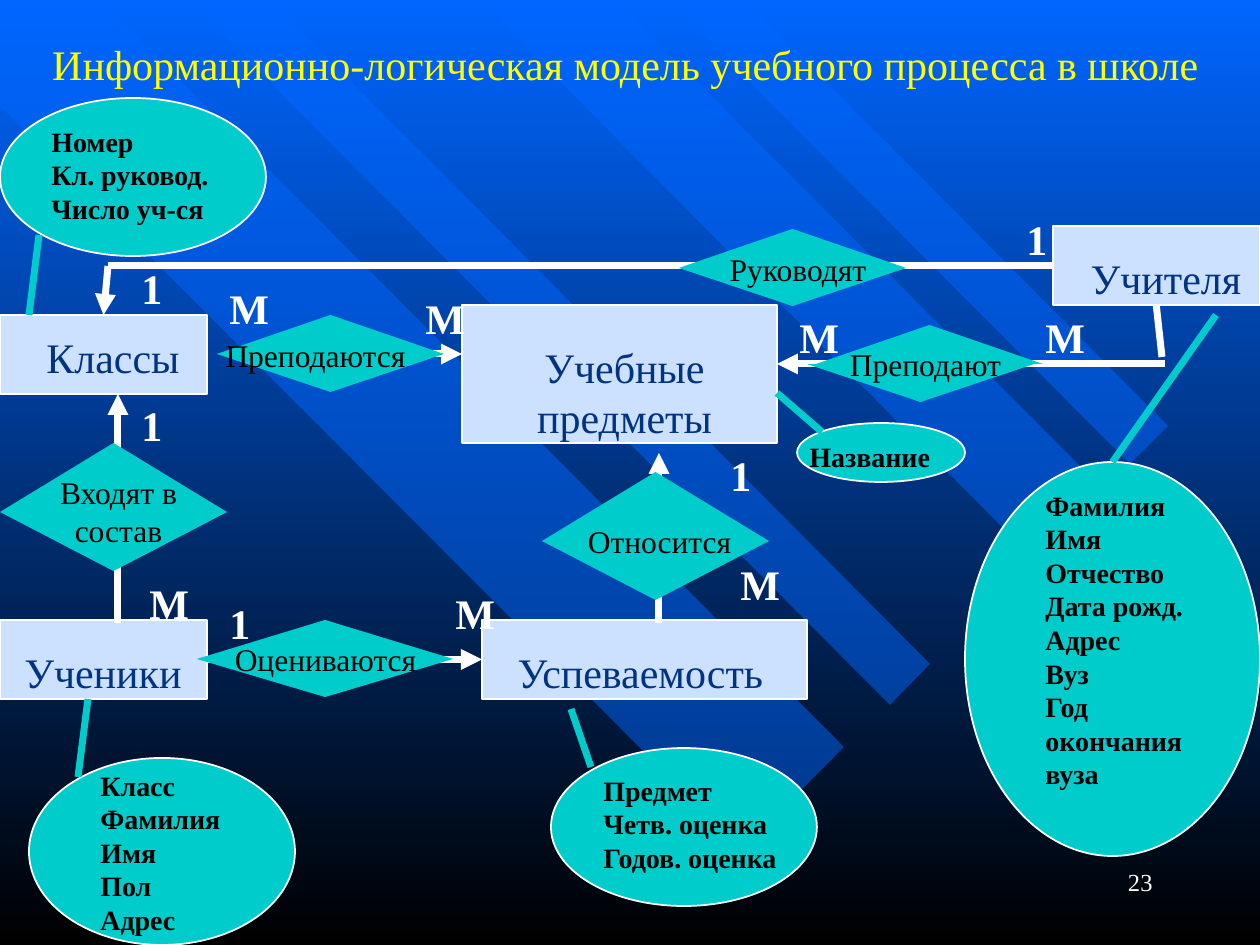
from lxml.etree import SubElement
from pptx import Presentation
from pptx.dml.color import RGBColor
from pptx.enum.shapes import MSO_CONNECTOR as Connector, MSO_SHAPE as Shape
from pptx.enum.text import MSO_ANCHOR as Anchor, MSO_AUTO_SIZE as AutoSize, PP_ALIGN as Align
from pptx.oxml.ns import qn
from pptx.util import Emu, Pt

SCALE = 914400 / 126
TOP, LEFT, RIGHT = 0, 1, 3


def px(length):
    return Emu(round(length * SCALE))


def rgb(value):
    return RGBColor.from_string(value)


def write_text(frame, text, *, size, color, font, bold=False, align=Align.CENTER,
               anchor=Anchor.TOP, padded=True, grow=True):
    frame.word_wrap = True
    frame.auto_size = AutoSize.SHAPE_TO_FIT_TEXT if grow else AutoSize.NONE
    frame.vertical_anchor = anchor
    if not padded:
        frame.margin_left = frame.margin_right = frame.margin_top = frame.margin_bottom = 0
    for index, line in enumerate(text.split("\n")):
        paragraph = frame.paragraphs[0] if index == 0 else frame.add_paragraph()
        paragraph.alignment = align
        paragraph.line_spacing = Pt(size * 1.2)
        run = paragraph.add_run()
        run.text = line
        run.font.name = font
        run.font.size = Pt(size)
        run.font.bold = bold
        run.font.color.rgb = rgb(color)


class ModelSlide:
    font = "Times New Roman"
    white, black, yellow = "FFFFFF", "000000", "FFFF00"
    blue, navy, pale, teal = "0066FF", "003380", "CCE0FF", "00CCCC"

    def __init__(self, presentation):
        self.slide = presentation.slides.add_slide(presentation.slide_layouts[6])
        self.shapes = self.slide.shapes

    def background(self):
        fill = self.slide.background.fill
        fill.gradient()
        fill.gradient_angle = 270
        for stop, position, color in zip(fill.gradient_stops, (0, 1), (self.blue, self.black)):
            stop.position = position
            stop.color.rgb = rgb(color)

    def ribbon(self, points):
        builder = self.shapes.build_freeform(*points[0], scale=SCALE)
        builder.add_line_segments(points[1:], close=True)
        shape = builder.convert_to_shape()
        self.paint(shape, self.blue)
        color = shape._element.spPr.find(qn("a:solidFill")).find(qn("a:srgbClr"))
        SubElement(color, qn("a:alpha"), val="50000")

    def paint(self, shape, fill, outlined=False):
        shape.shadow.inherit = False
        shape.fill.solid()
        shape.fill.fore_color.rgb = rgb(fill)
        if outlined:
            shape.line.color.rgb = rgb(self.white)
            shape.line.width = Pt(1)
        else:
            shape.line.fill.background()

    def preset(self, kind, box, fill, outlined=False):
        shape = self.shapes.add_shape(kind, *map(px, box))
        self.paint(shape, fill, outlined)
        return shape

    def text(self, text, box, **style):
        frame = self.shapes.add_textbox(*map(px, box)).text_frame
        write_text(frame, text, font=self.font, **style)

    def entity(self, name, box, text_box):
        shape = self.preset(Shape.RECTANGLE, box, self.pale, True)
        self.text(name, text_box, size=24, color=self.navy)
        return shape

    def attributes(self, names, box, text_box):
        shape = self.preset(Shape.OVAL, box, self.teal, True)
        self.text(names, text_box, size=16, color=self.black, bold=True, align=Align.LEFT)
        return shape

    def relation(self, name, left, top, width, upper, lower, text_box, shift=0):
        self.preset(Shape.ISOSCELES_TRIANGLE, (left, top, width, upper), self.teal)
        bottom = self.preset(Shape.ISOSCELES_TRIANGLE,
                             (left - shift, top + upper, width, lower), self.teal)
        bottom.rotation = 180
        self.text(name, text_box, size=18, color=self.black, padded=False)

    def connector(self, start, end, color, arrow=False, begin_at=None, end_at=None):
        connector = self.shapes.add_connector(Connector.STRAIGHT, *map(px, start + end))
        if begin_at:
            connector.begin_connect(*begin_at)
        if end_at:
            connector.end_connect(*end_at)
        connector.line.color.rgb = rgb(color)
        connector.line.width = Pt(4)
        properties = connector._element.spPr
        if arrow:
            SubElement(properties.find(qn("a:ln")), qn("a:tailEnd"), type="triangle")
        SubElement(properties, qn("a:effectLst"))

    def multiplicity(self, symbol, left, top):
        self.text(symbol, (left, top, 29, 63), size=24, color=self.white, bold=True)


def main():
    presentation = Presentation()
    presentation.slide_width, presentation.slide_height = px(1260), px(945)
    model = ModelSlide(presentation)
    model.background()

    for points in (
        [(844, 747), (100, 0), (0, 0), (0, 106), (742, 850)],
        [(270, 0), (930, 664), (890, 705), (188, 0)],
        [(616, 0), (1104, 490), (1034, 559), (479, 0)],
        [(668, 0), (1130, 464), (1168, 426), (745, 0)],
    ):
        model.ribbon(points)

    model.text("Информационно-логическая модель учебного процесса в школе",
               (20, -20, 1211, 168), size=24, color=model.yellow,
               anchor=Anchor.MIDDLE, padded=False, grow=False)
    model.text("23", (903, 861, 262, 63), size=14, color=model.white,
               align=Align.RIGHT, grow=False)

    classes = model.entity("Классы", (0, 315, 207, 79), (20, 325, 186, 63))
    model.entity("Учебные предметы", (462, 305, 315, 138), (472, 335, 305, 115))
    pupils = model.entity("Ученики", (0, 620, 207, 79), (10, 640, 186, 63))
    progress = model.entity("Успеваемость", (482, 620, 325, 79), (493, 640, 295, 63))

    for start, end, arrow, begin_at, end_at in (
        ((108, 266), (1152, 266), False, None, None),
        ((108, 266), (103, 315), True, None, (classes, TOP)),
        ((1152, 266), (1162, 357), False, None, None),
        ((118, 623), (118, 394), True, None, None),
        ((207, 659), (482, 659), True, (pupils, RIGHT), (progress, LEFT)),
        ((325, 354), (462, 354), True, None, None),
        ((1165, 364), (777, 364), True, None, None),
        ((659, 623), (659, 453), True, None, None),
    ):
        model.connector(start, end, model.white, arrow, begin_at, end_at)

    model.relation("Руководят", 679, 229, 227, 39, 38, (709, 250, 178, 38))
    model.relation("Преподаются", 217, 315, 227, 39, 38, (217, 336, 197, 38))
    model.relation("Преподают", 816, 325, 227, 39, 38, (827, 345, 197, 38), shift=9)
    model.relation("Входят в состав", 0, 443, 227, 69, 59, (20, 473, 197, 77))
    model.relation("Оцениваются", 197, 620, 256, 39, 38, (227, 640, 197, 38))
    model.relation("Относится", 542, 472, 227, 69, 59, (561, 522, 197, 38))

    model.entity("Учителя", (1053, 226, 207, 79), (1073, 246, 186, 63))
    model.attributes("Номер\nКл. руковод.\nЧисло уч-ся",
                     (0, 98, 266, 158), (39, 118, 207, 115))
    model.attributes("Класс\nФамилия\nИмя\nПол\nАдрес",
                     (29, 758, 266, 187), (88, 762, 207, 183))
    model.attributes("Предмет\nЧетв. оценка\nГодов. оценка",
                     (551, 748, 266, 158), (591, 767, 207, 115))
    model.attributes("Название", (797, 423, 168, 59), (797, 433, 168, 47))
    teacher_data = model.attributes(
        "Фамилия\nИмя\nОтчество\nДата рожд.\nАдрес\nВуз\nГод окончания вуза",
        (965, 462, 295, 394), (1033, 482, 207, 318))

    for start, end, end_at in (
        ((39, 235), (29, 315), None),
        ((88, 699), (78, 777), None),
        ((571, 709), (591, 767), None),
        ((777, 393), (822, 432), None),
        ((1216, 315), (1113, 462), (teacher_data, TOP)),
    ):
        model.connector(start, end, model.teal, end_at=end_at)

    for symbol, places in {
        "1": [(129, 256), (1014, 207), (129, 393), (217, 591), (718, 443)],
        "М": [(137, 571), (443, 581), (728, 552), (787, 305),
              (1033, 305), (217, 276), (413, 286)],
    }.items():
        for left, top in places:
            model.multiplicity(symbol, left, top)

    presentation.save("out.pptx")


if __name__ == "__main__":
    main()
